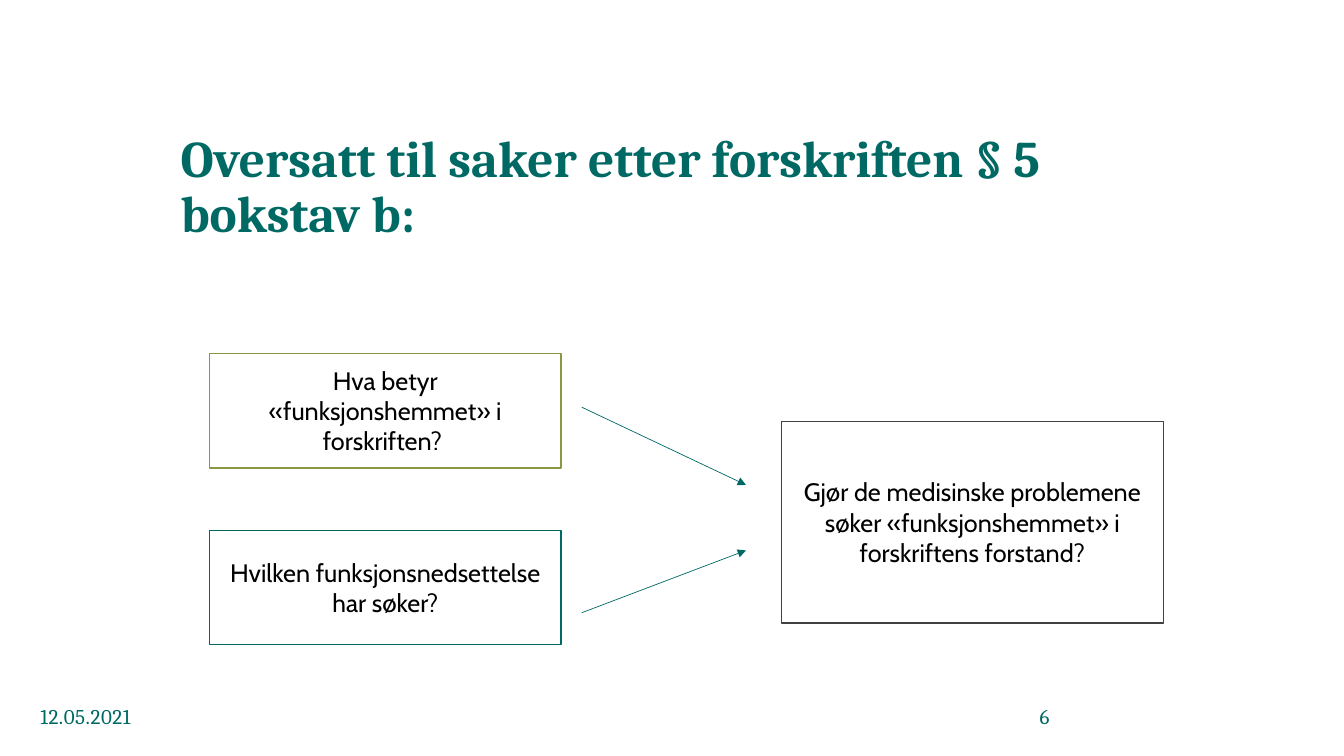
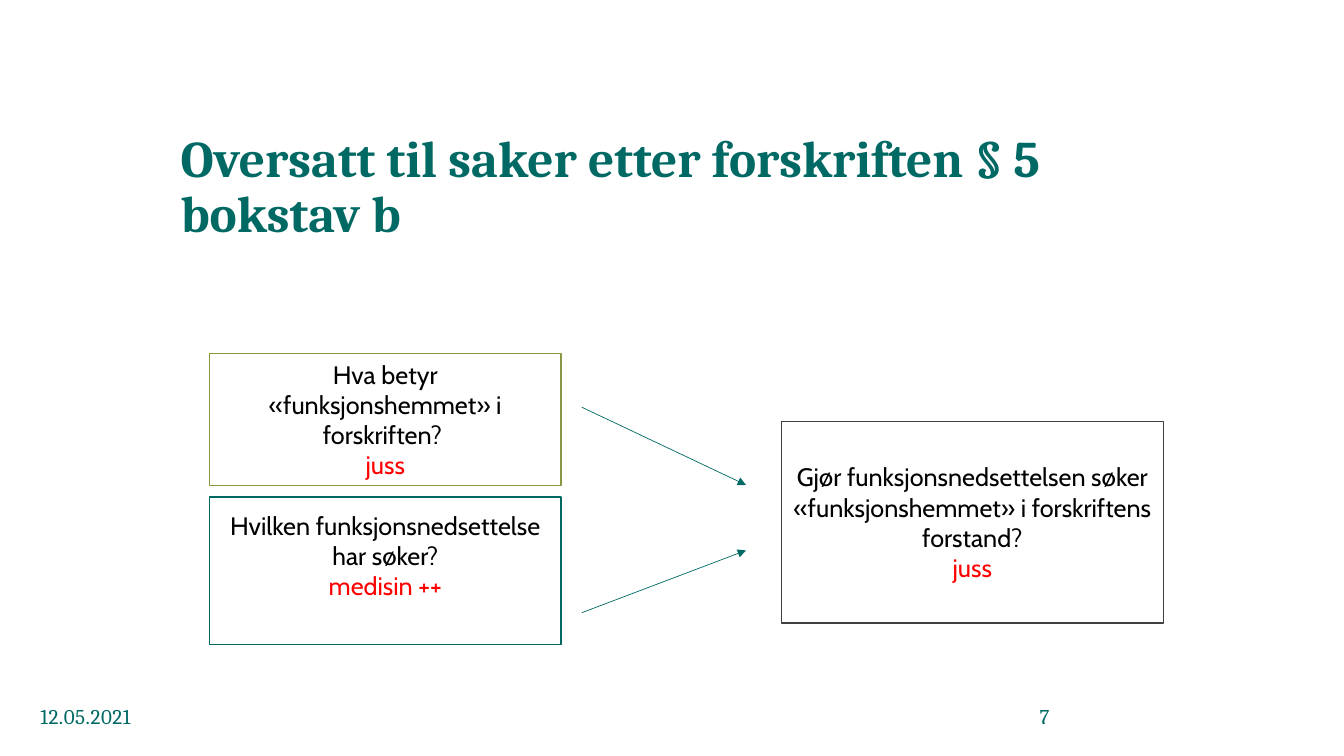
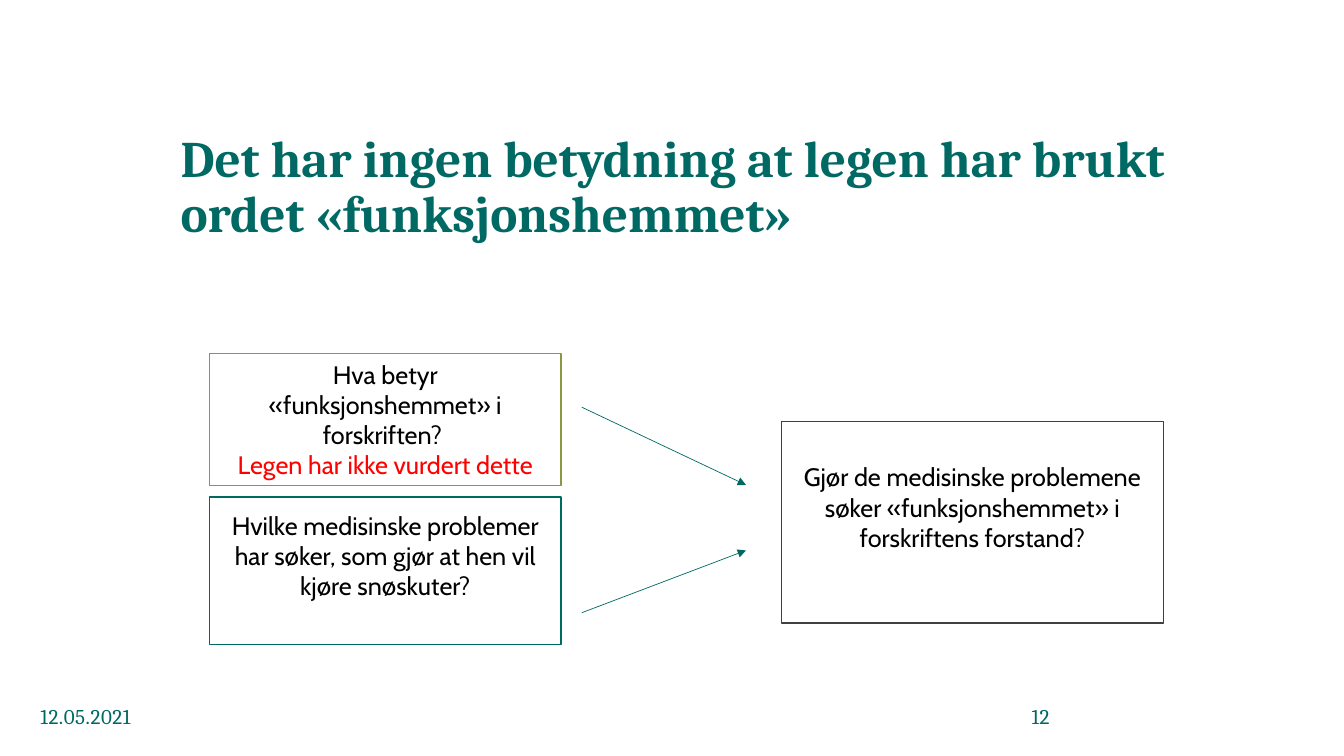
from lxml import etree
from pptx import Presentation
from pptx.dml.color import RGBColor
from pptx.enum.shapes import MSO_CONNECTOR, MSO_SHAPE
from pptx.enum.text import MSO_ANCHOR, PP_ALIGN
from pptx.oxml.ns import qn
from pptx.util import Cm, Pt

TEAL = RGBColor(0x00, 0x69, 0x64)
OLIVE = RGBColor(0x8B, 0x97, 0x42)
GREY = RGBColor(0x40, 0x40, 0x40)
WHITE = RGBColor(0xFF, 0xFF, 0xFF)
BLACK = RGBColor(0x00, 0x00, 0x00)
RED = RGBColor(0xFF, 0x00, 0x00)

TITLE_ONLY = 5
HEAD_FONT, BODY_FONT = "Cambria", "Cabin"
DATE = "12.05.2021"

LEFT_X, LEFT_W = 5.28, 8.86
TOP_Y, BOTTOM_EDGE = 8.91, 16.25
INSET, LINE_H = 0.13, 0.76

MEANING = "Hva betyr «funksjonshemmet» i forskriften? "
IMPAIRMENT = "Hvilken funksjonsnedsettelse har søker?"
PROBLEMS = "Gjør de medisinske problemene søker «funksjonshemmet» i forskriftens forstand?"


class Deck:
    def __init__(self):
        self.prs = Presentation()
        self.prs.slide_width, self.prs.slide_height = Cm(33.87), Cm(19.05)
        self.slide = None

    def add_slide(self, title, number):
        self.slide = self.prs.slides.add_slide(self.prs.slide_layouts[TITLE_ONLY])
        self.title(title)
        self.footer(1.02, 2.82, DATE, PP_ALIGN.LEFT)
        self.footer(24.82, 1.63, str(number), PP_ALIGN.RIGHT)

    def style(self, p, font, size, color, align, bold=False):
        p.alignment = align
        p.font.name, p.font.size, p.font.bold = font, Pt(size), bold
        p.font.color.rgb = color

    def no_margins(self, tf):
        tf.margin_left = tf.margin_right = tf.margin_top = tf.margin_bottom = 0
        tf.word_wrap = True

    def title(self, text):
        sp = self.slide.shapes.title
        sp.left, sp.top, sp.width, sp.height = Cm(4.55), Cm(3.35), Cm(25.8), Cm(3.12)
        tf = sp.text_frame
        tf.text = text
        self.no_margins(tf)
        tf.vertical_anchor = MSO_ANCHOR.TOP
        p = tf.paragraphs[0]
        p.line_spacing = 0.9
        self.style(p, HEAD_FONT, 36.6, TEAL, PP_ALIGN.LEFT, bold=True)

    def footer(self, x, w, text, align):
        sp = self.slide.shapes.add_textbox(Cm(x), Cm(17.73), Cm(w), Cm(0.64))
        tf = sp.text_frame
        self.no_margins(tf)
        p = tf.paragraphs[0]
        r = p.add_run()
        r.text = text
        r._r.get_or_add_rPr().set("spc", "40")
        self.style(p, HEAD_FONT, 15, TEAL, align)

    def box(self, x, y, w, h, border, question, answer=None, raised=False):
        """Draw a framed question with an optional red answer; raised lifts the text half a line."""
        sp = self.slide.shapes.add_shape(MSO_SHAPE.RECTANGLE, Cm(x), Cm(y), Cm(w), Cm(h))
        sp.shadow.inherit = False
        sp.fill.solid()
        sp.fill.fore_color.rgb = WHITE
        sp.line.color.rgb = border
        sp.line.width = Pt(1)
        tf = sp.text_frame
        tf.word_wrap = True
        tf.vertical_anchor = MSO_ANCHOR.MIDDLE
        tf.margin_bottom = Cm(INSET + LINE_H if raised else INSET)
        p = tf.paragraphs[0]
        p.text = question
        self.style(p, BODY_FONT, 18, BLACK, PP_ALIGN.CENTER)
        if answer:
            p = tf.add_paragraph()
            p.text = answer
            self.style(p, BODY_FONT, 18, RED, PP_ALIGN.CENTER)

    def arrow(self, y1, y2):
        line = self.slide.shapes.add_connector(
            MSO_CONNECTOR.STRAIGHT, Cm(14.66), Cm(y1), Cm(18.8), Cm(y2))
        line.line.color.rgb = TEAL
        line.line.width = Pt(0.5)
        etree.SubElement(line.line._get_or_add_ln(), qn("a:tailEnd"), type="triangle")
        etree.SubElement(line._element.spPr, qn("a:effectLst"))

    def flow(self, heights, meaning, facts, conclusion):
        """Draw two questions that lead to a conclusion; each is (text, answer, raised)."""
        upper_h, lower_h = heights
        self.box(LEFT_X, TOP_Y, LEFT_W, upper_h, OLIVE, *meaning)
        self.box(LEFT_X, BOTTOM_EDGE - lower_h, LEFT_W, lower_h, TEAL, *facts)
        self.box(19.69, 10.62, 9.63, 5.08, GREY, *conclusion)
        self.arrow(10.26, 12.22)
        self.arrow(15.44, 13.87)


EVEN, TALL = (2.88, 2.88), (3.33, 3.73)
SLIDES = [
    ("Oversatt til saker etter forskriften § 5 bokstav b:", 6, EVEN,
     (MEANING,), (IMPAIRMENT,), (PROBLEMS,)),
    ("Oversatt til saker etter forskriften § 5 bokstav b", 7, TALL,
     (MEANING, "juss"),
     (IMPAIRMENT, "medisin ++", True),
     ("Gjør funksjonsnedsettelsen søker «funksjonshemmet» i forskriftens forstand?", "juss")),
    ("Det har ingen betydning at legen har brukt ordet «funksjonshemmet»", 12, TALL,
     (MEANING, "Legen har ikke vurdert dette"),
     ("Hvilke medisinske problemer har søker, som gjør at hen vil kjøre snøskuter?", None, True),
     (PROBLEMS, None, True)),
]


def main():
    deck = Deck()
    for title, number, *flow in SLIDES:
        deck.add_slide(title, number)
        deck.flow(*flow)
    deck.prs.save("out.pptx")


if __name__ == "__main__":
    main()
